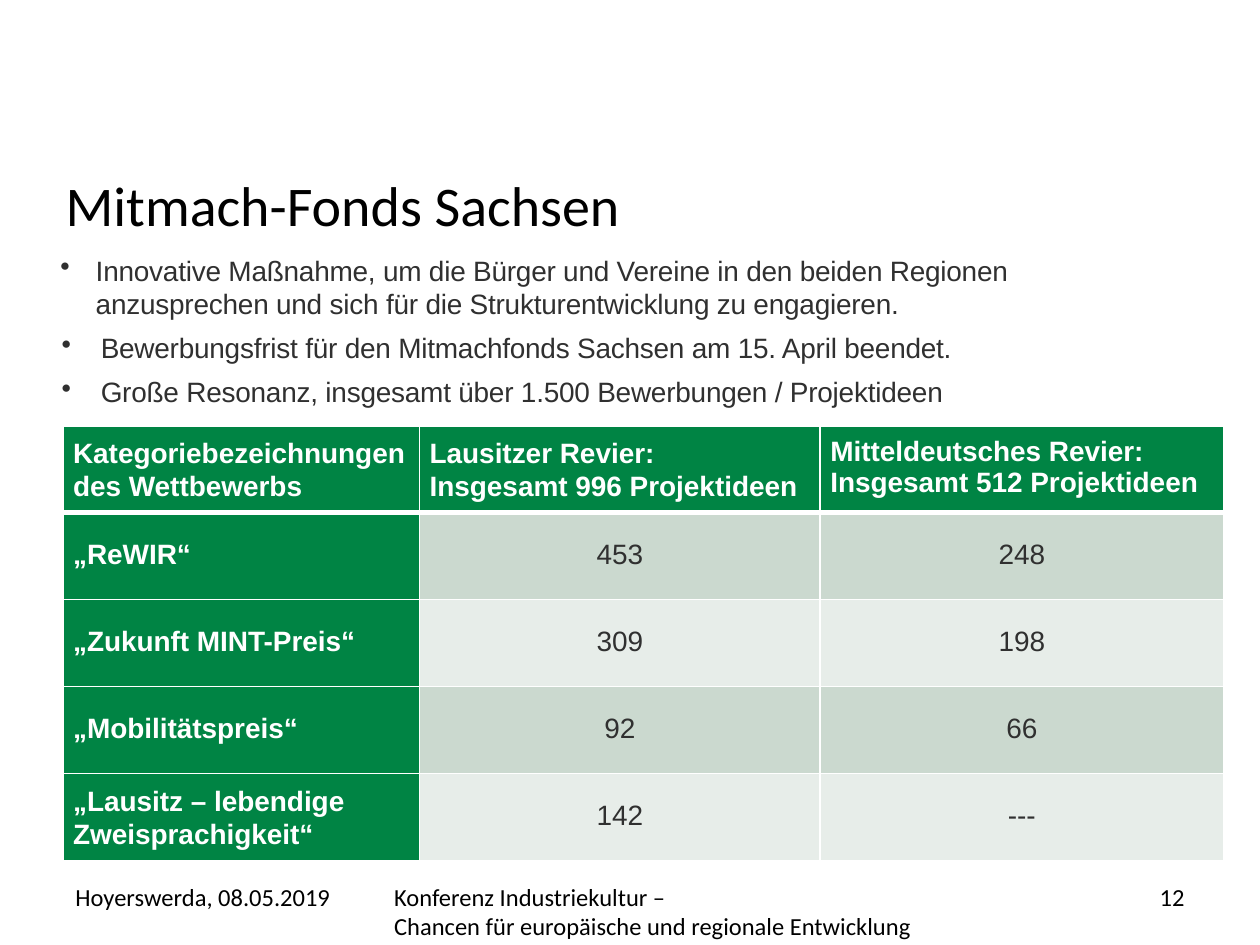
"""Build the slide on the Mitmach-Fonds Sachsen with its table of project ideas."""
import lxml.etree
import pptx
import pptx.dml.color
import pptx.enum.text
import pptx.oxml
import pptx.oxml.ns
import pptx.util
from pptx.util import Inches

ALIGN = pptx.enum.text.PP_ALIGN
ANCHOR = pptx.enum.text.MSO_ANCHOR
AUTO_SIZE = pptx.enum.text.MSO_AUTO_SIZE
QN = pptx.oxml.ns.qn
GREEN, WHITE, BLACK, GREY = "008444", "FFFFFF", "000000", "303030"
BANDS = ("CBD9CF", "E7EDE9")


def rgb(value):
    return pptx.dml.color.RGBColor.from_string(value)


def apply(target, values):
    for name, value in values.items():
        setattr(target, name, value)


class SlideBuilder:
    def __init__(self, presentation):
        self.slide = presentation.slides.add_slide(presentation.slide_layouts[5])
        self.title_font = {"name": "Calibri", "size": pptx.util.Pt(32)}
        self.footer_font = {"name": "Calibri", "size": pptx.util.Pt(14)}
        self.body_font = {"name": "Arial", "size": pptx.util.Pt(16)}

    def format(self, paragraph, font, color, **values):
        apply(paragraph, values)
        for run in paragraph.runs:
            apply(run.font, font)
            run.font.color.rgb = rgb(color)

    def place(self, shape, left, top, width, height):
        apply(shape, {"left": Inches(left), "top": Inches(top),
                      "width": Inches(width), "height": Inches(height)})

    def title(self, text, *box):
        shape = self.slide.shapes.title
        self.place(shape, *box)
        frame = shape.text_frame
        frame.text = text
        apply(frame, {"word_wrap": True, "vertical_anchor": ANCHOR.TOP,
                      "auto_size": AUTO_SIZE.NONE})
        self.format(frame.paragraphs[0], self.title_font, BLACK, alignment=ALIGN.LEFT)

    def text_frame(self, text, *box):
        shape = self.slide.shapes.add_textbox(*(Inches(length) for length in box))
        shape.text_frame.word_wrap = True
        shape.text_frame.text = text
        return shape.text_frame

    def footer(self, text, *box, alignment=ALIGN.LEFT):
        for paragraph in self.text_frame(text, *box).paragraphs:
            self.format(paragraph, self.footer_font, BLACK, alignment=alignment)

    def bullets(self, items, *box):
        frame = self.text_frame("\n".join(items), *box)
        apply(frame, {"margin_left": 0, "margin_top": Inches(0.01),
                      "margin_right": 0, "margin_bottom": 0})
        for index, paragraph in enumerate(frame.paragraphs):
            margin, indent = (0.33, -0.31) if index else (0.29, -0.28)
            properties = paragraph._p.get_or_add_pPr()
            properties.set("marL", str(Inches(margin)))
            properties.set("indent", str(Inches(indent)))
            lxml.etree.SubElement(properties, QN("a:buChar")).set("char", "•")
            self.format(paragraph, self.body_font, GREY,
                        space_before=pptx.util.Pt(6 if index else 0))
            for run in paragraph.runs:
                run._r.get_or_add_rPr().set("spc", "-10")

    def borders(self, cell, **widths):
        properties = cell._tc.get_or_add_tcPr()
        for position, side in enumerate(("lnL", "lnR", "lnT", "lnB")):
            width = pptx.util.Pt(widths.get(side, 1))
            properties.insert(position, pptx.oxml.parse_xml(
                f'<a:{side} {pptx.oxml.ns.nsdecls("a")} w="{width}"><a:solidFill>'
                f'<a:srgbClr val="{WHITE}"/></a:solidFill></a:{side}>'))

    def cell(self, cell, text, fill, color, bold, top, left, **values):
        cell.text = text
        apply(cell, {"margin_left": Inches(left), "margin_top": Inches(top),
                     "margin_right": 0, "margin_bottom": 0})
        cell.fill.solid()
        cell.fill.fore_color.rgb = rgb(fill)
        self.format(cell.text_frame.paragraphs[0],
                    {**self.body_font, "bold": bold}, color, **values)

    def table(self, rows, widths, row_height, left, top):
        shape = self.slide.shapes.add_table(
            len(rows), len(widths), Inches(left), Inches(top),
            Inches(sum(widths)), Inches(row_height * len(rows)))
        table = shape.table
        for column, width in zip(table.columns, widths):
            column.width = Inches(width)
        for row_index, texts in enumerate(rows):
            table.rows[row_index].height = Inches(row_height)
            for column_index, text in enumerate(texts):
                cell = table.cell(row_index, column_index)
                if row_index and column_index:
                    self.cell(cell, text, BANDS[(row_index - 1) % 2], GREY, False,
                              0.21, 0, alignment=ALIGN.CENTER)
                else:
                    two_lines = "\v" in text
                    spaced = two_lines and column_index < 2
                    self.cell(cell, text, GREEN, WHITE, True,
                              0.08 if two_lines else 0.21, 0.08,
                              line_spacing=pptx.util.Pt(19.1) if spaced else None)
                self.borders(cell, **({"lnB": 3} if row_index == 0 else
                                      {"lnT": 3} if row_index == 1 else {}))


def main():
    presentation = pptx.Presentation()
    apply(presentation, {"slide_width": Inches(10), "slide_height": Inches(7.5)})
    builder = SlideBuilder(presentation)
    builder.title("Mitmach-Fonds Sachsen", 0.42, 1.3, 8.28, 0.64)
    builder.bullets([
        "Innovative Maßnahme, um die Bürger und Vereine in den beiden Regionen "
        "anzusprechen und sich für die Strukturentwicklung zu engagieren.",
        "Bewerbungsfrist für den Mitmachfonds Sachsen am 15. April beendet.",
        "Große Resonanz, insgesamt über 1.500 Bewerbungen / Projektideen",
    ], 0.47, 2, 7.8, 1.27)
    builder.table([
        ("Kategoriebezeichnungen\vdes Wettbewerbs",
         "Lausitzer Revier:\vInsgesamt 996 Projektideen",
         "Mitteldeutsches Revier:\vInsgesamt 512 Projektideen"),
        ("„ReWIR“", "453", "248"),
        ("„Zukunft MINT-Preis“", "309", "198"),
        ("„Mobilitätspreis“", "92", "66"),
        ("„Lausitz – lebendige\vZweisprachigkeit“", "142", "---"),
    ], (2.83, 3.18, 3.2), 0.69, 0.5, 3.38)
    builder.footer("Hoyerswerda, 08.05.2019", 0.5, 6.95, 2.3, 0.4)
    builder.footer("Konferenz Industriekultur –\n"
                   "Chancen für europäische und regionale Entwicklung",
                   3.03, 6.95, 4.33, 0.4)
    builder.footer("12", 7.83, 6.95, 1.67, 0.4, alignment=ALIGN.RIGHT)
    presentation.save("out.pptx")


if __name__ == "__main__":
    main()
